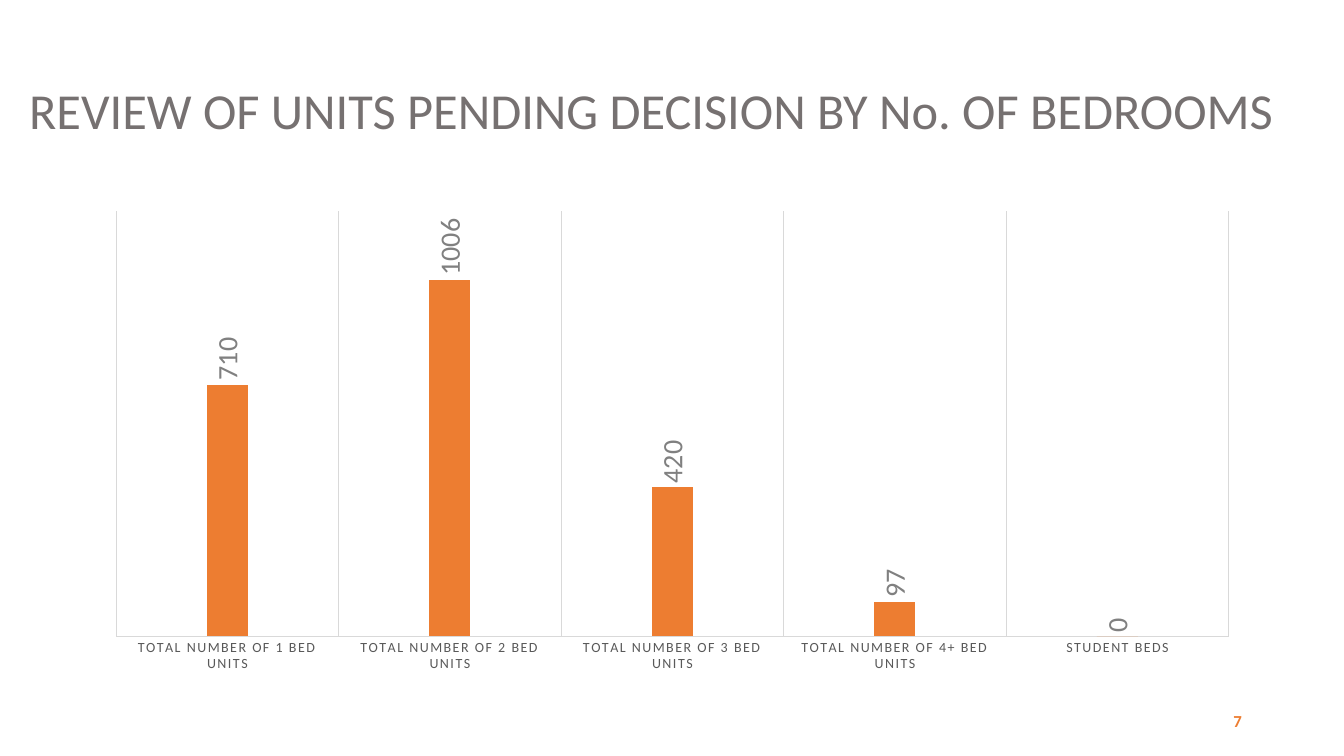
from pptx import Presentation
from pptx.chart.data import CategoryChartData
from pptx.dml.color import RGBColor
from pptx.enum.chart import XL_CHART_TYPE as CT, XL_LABEL_POSITION as LP, XL_TICK_MARK as TM
from pptx.enum.text import MSO_ANCHOR as ANCHOR, PP_ALIGN as ALIGN
from pptx.oxml.ns import qn
from pptx.util import Cm, Pt

ORANGE = RGBColor(0xED, 0x7D, 0x31)
TITLE_GREY = RGBColor(0x76, 0x71, 0x71)
LABEL_GREY = RGBColor(0x80, 0x80, 0x80)
AXIS_GREY = RGBColor(0x59, 0x59, 0x59)
LINE_GREY = RGBColor(0xD9, 0xD9, 0xD9)
BLACK = RGBColor(0, 0, 0)

UNITS = {
    "TOTAL NUMBER OF 1 BED UNITS": 710,
    "TOTAL NUMBER OF 2 BED UNITS": 1006,
    "TOTAL NUMBER OF 3 BED UNITS": 420,
    "TOTAL NUMBER OF 4+ BED UNITS": 97,
    "STUDENT BEDS": 0,
}


def assign(obj, **values):
    """Set each given attribute on an object."""
    for name, value in values.items():
        setattr(obj, name, value)


class Deck:
    """Hold the style and the current slide."""

    font = "Calibri"

    def __init__(self, prs):
        """Start a title-only slide."""
        self.s = prs.slides.add_slide(prs.slide_layouts[5])

    def style(self, font, size, color, **values):
        """Format a font."""
        assign(font, name=self.font, size=Pt(size), **values)
        font.color.rgb = color

    def line(self, fmt):
        """Format a thin chart line."""
        fmt.line.color.rgb = LINE_GREY
        fmt.line.width = Pt(0.75)

    def add_text(self, sp, text, size, color, align, **values):
        """Put one formatted paragraph in a shape."""
        tf = sp.text_frame
        assign(tf, word_wrap=True, vertical_anchor=ANCHOR.MIDDLE)
        p = tf.paragraphs[0]
        p.alignment = align
        r = p.add_run()
        r.text = text
        self.style(r.font, size, color, **values)
        return p, r

    def title(self, text, left, top, width, height):
        """Fill and place the title."""
        sp = self.s.shapes.title
        assign(sp, left=left, top=top, width=width, height=height)
        p, r = self.add_text(sp, text, 36, TITLE_GREY, ALIGN.LEFT)
        p.line_spacing = 0.9

    def page_number(self, text, *box):
        """Add the page number."""
        sp = self.s.shapes.add_textbox(*box)
        p, r = self.add_text(sp, text, 12, ORANGE, ALIGN.RIGHT, bold=True)
        r.font._element.set("spc", "100")

    def column_chart(self, values, *box):
        """Add a column chart with upright value labels."""
        data = CategoryChartData()
        data.categories = list(values)
        data.add_series("Series 1", list(values.values()))
        chart = self.s.shapes.add_chart(CT.COLUMN_CLUSTERED, *box, data).chart
        assign(chart, has_legend=False, has_title=False)
        self.style(chart.font, 10, BLACK)

        cat = chart.category_axis
        assign(cat, major_tick_mark=TM.NONE, minor_tick_mark=TM.NONE, has_major_gridlines=True)
        self.line(cat.format)
        self.line(cat.major_gridlines.format)
        self.style(cat.tick_labels.font, 10, AXIS_GREY)
        cat._element.find(".//" + qn("a:defRPr")).set("spc", "120")
        assign(chart.value_axis, visible=False, has_major_gridlines=False,
               minimum_scale=0, maximum_scale=1200)

        plot = chart.plots[0]
        assign(plot, gap_width=444, overlap=-90, vary_by_categories=False)
        series = plot.series[0]
        series.format.fill.solid()
        series.format.fill.fore_color.rgb = ORANGE
        labels = series.data_labels
        assign(labels, show_value=True, position=LP.OUTSIDE_END)
        self.style(labels.font, 20, LABEL_GREY)
        body = labels._element.find(".//" + qn("a:bodyPr"))
        for name, value in {"rot": "-5400000", "vert": "horz"}.items():
            body.set(name, value)


def main():
    """Build and save the slide."""
    prs = Presentation()
    assign(prs, slide_width=Cm(33.87), slide_height=Cm(19.05))
    deck = Deck(prs)
    deck.page_number("7", Cm(23.93), Cm(17.65), Cm(7.62), Cm(1.02))
    deck.title("REVIEW OF UNITS PENDING DECISION BY No. OF BEDROOMS",
               Cm(0.48), Cm(1.02), Cm(32.13), Cm(3.68))
    deck.column_chart(UNITS, Cm(2.34), Cm(5.08), Cm(29.21), Cm(12.09))
    prs.save("out.pptx")


if __name__ == "__main__":
    main()
